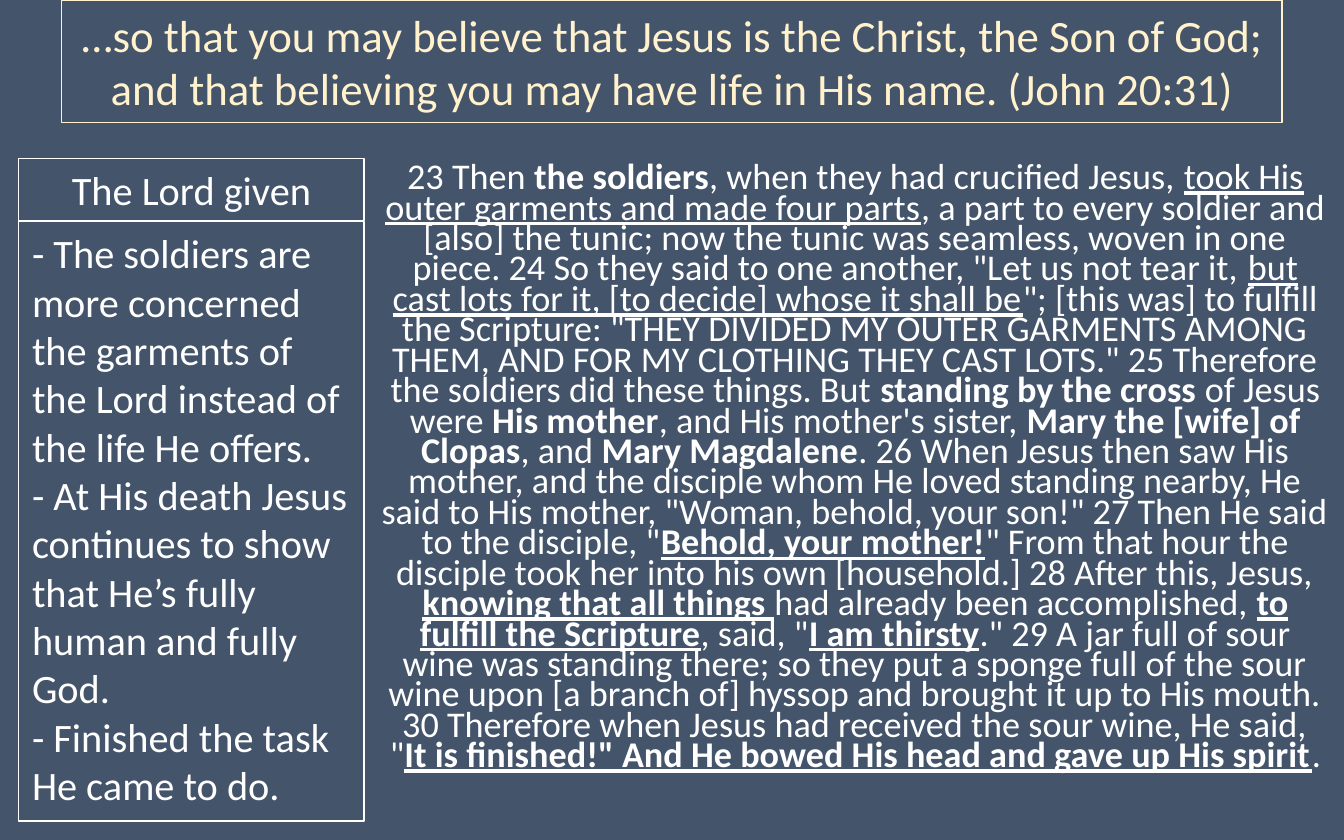
import pptx
import pptx.util
import pptx.dml.color
import pptx.enum.shapes
import pptx.enum.text
import pptx.oxml

Inches, Pt = pptx.util.Inches, pptx.util.Pt
ALIGN = pptx.enum.text.PP_ALIGN
ANCHOR = pptx.enum.text.MSO_ANCHOR
COLORS = {"slate": "44546A", "cream": "FFF2CC", "white": "FFFFFF"}


def color(name):
    return pptx.dml.color.RGBColor.from_string(COLORS[name])


def add_span(para, text, size=21.6, ink="white", bold=False, underline=False):
    span = para.add_run()
    span.text = text
    span.font.name = "Calibri"
    span.font.size = Pt(size)
    span.font.color.rgb = color(ink)
    span.font.bold = bold
    span.font.underline = underline


deck = pptx.Presentation()
deck.slide_width, deck.slide_height = Inches(10), Inches(6.25)
page = deck.slides.add_slide(deck.slide_layouts[1])
page.background.fill.solid()
page.background.fill.fore_color.rgb = color("slate")

# Theme verse across the top
title = page.shapes.title
title.left, title.top = Inches(0.46), Inches(0)
title.width, title.height = Inches(9.08), Inches(0.91)
title.line.color.rgb = color("cream")
title.line.width = Pt(0.75)
title.text_frame.word_wrap = True
title.text_frame.auto_size = pptx.enum.text.MSO_AUTO_SIZE.NONE
title.text_frame.vertical_anchor = ANCHOR.MIDDLE
para = title.text_frame.paragraphs[0]
para.alignment = ALIGN.CENTER
add_span(para, "…so that you may believe that Jesus is the Christ, the Son of God; "
         "and that believing you may have life in His name. (John 20:31)",
         size=24, ink="cream")

# Scripture passage: each piece with its emphasis (b = bold, u = underline)
passage = [
    ("23 Then ", ""),
    ("the soldiers", "b"),
    (", when they had crucified Jesus, ", ""),
    ("took His outer garments and made four parts", "u"),
    (", a part to every soldier and [also] the tunic; now the tunic was seamless, "
     "woven in one piece. 24 So they said to one another, \"Let us not tear it, ", ""),
    ("but cast lots for it, [to decide] whose it shall be", "u"),
    ("\"; [this was] to fulfill the Scripture: \"THEY DIVIDED MY OUTER GARMENTS "
     "AMONG THEM, AND FOR MY CLOTHING THEY CAST LOTS.\" 25 Therefore the soldiers "
     "did these things. But ", ""),
    ("standing by the cross ", "b"),
    ("of Jesus were ", ""),
    ("His mother", "b"),
    (", and His mother's sister, ", ""),
    ("Mary the [wife] of Clopas", "b"),
    (", and ", ""),
    ("Mary Magdalene", "b"),
    (". 26 When Jesus then saw His mother, and the disciple whom He loved standing "
     "nearby, He said to His mother, \"Woman, behold, your son!\" 27 Then He said "
     "to the disciple, \"", ""),
    ("Behold, your mother!", "bu"),
    ("\" From that hour the disciple took her into his own [household.] 28 After "
     "this, Jesus, ", ""),
    ("knowing that all things ", "bu"),
    ("had already been accomplished, ", ""),
    ("to fulfill the Scripture", "bu"),
    (", said, \"", ""),
    ("I am thirsty", "bu"),
    (".\" 29 A jar full of sour wine was standing there; so they put a sponge full "
     "of the sour wine upon [a branch of] hyssop and brought it up to His mouth. "
     "30 Therefore when Jesus had received the sour wine, He said, \"", ""),
    ("It is finished!\" And He bowed His head and gave up His spirit", "bu"),
    (".", ""),
]
body = page.placeholders[1]
body.left, body.top = Inches(2.73), Inches(1.18)
body.width, body.height = Inches(7.27), Inches(5.07)
body.text_frame.word_wrap = True
body.text_frame.auto_size = pptx.enum.text.MSO_AUTO_SIZE.NONE
para = body.text_frame.paragraphs[0]
para.alignment = ALIGN.CENTER
para.line_spacing = 0.7
para.space_before = Pt(0)
properties = para._p.get_or_add_pPr()
properties.set("marL", "0")
properties.set("indent", "0")
properties.append(pptx.oxml.parse_xml(
    '<a:buNone xmlns:a="http://schemas.openxmlformats.org/drawingml/2006/main"/>'))
for text, emphasis in passage:
    add_span(para, text, size=19.4, bold="b" in emphasis, underline="u" in emphasis)

# Side panel: heading box above the notes box
panel = [
    (1.18, 0.46, ALIGN.CENTER, ["The Lord given"]),
    (1.65, 4.46, ALIGN.LEFT, [
        "- The soldiers are more concerned the garments of the Lord instead of "
        "the life He offers.",
        "- At His death Jesus continues to show that He’s fully human and fully God.",
        "- Finished the task He came to do.",
    ]),
]
for top, height, alignment, lines in panel:
    box = page.shapes.add_shape(pptx.enum.shapes.MSO_SHAPE.RECTANGLE,
                                Inches(0.14), Inches(top), Inches(2.57), Inches(height))
    box.shadow.inherit = False
    box.fill.background()
    box.line.color.rgb = color("white")
    box.line.width = Pt(0.75)
    frame = box.text_frame
    frame.word_wrap = True
    frame.vertical_anchor = ANCHOR.TOP
    for index, line in enumerate(lines):
        para = frame.add_paragraph() if index else frame.paragraphs[0]
        para.alignment = alignment
        add_span(para, line)

deck.save("out.pptx")
